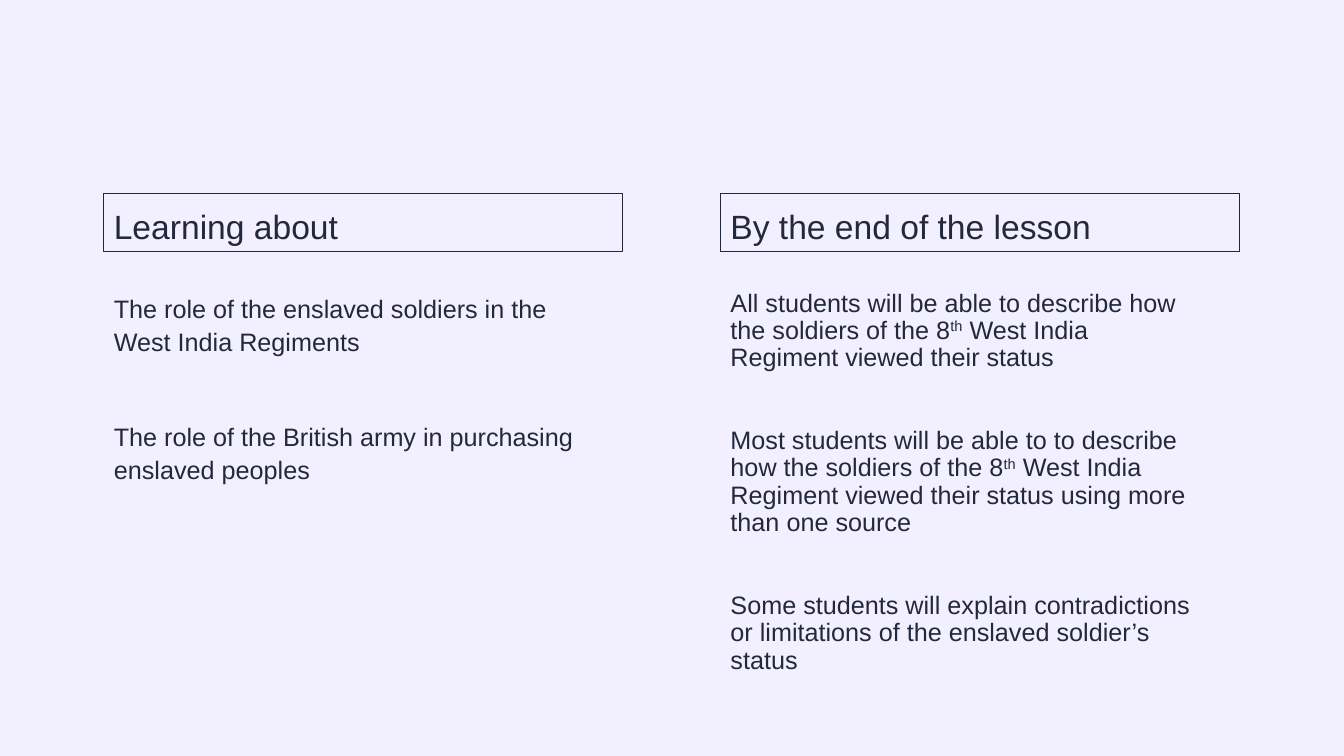
from pptx import Presentation
from pptx.dml.color import RGBColor
from pptx.enum.shapes import MSO_SHAPE
from pptx.enum.text import MSO_ANCHOR, PP_ALIGN
from pptx.util import Cm, Pt

INK = RGBColor(0x24, 0x28, 0x3C)
LAVENDER = RGBColor(0xF2, 0xF0, 0xFF)
FONT = "Arial"


def write(paragraph, text, size=18, line_spacing=0.9, space_before=0):
    """Fill a paragraph; text between two carets is superscript."""
    paragraph.alignment = PP_ALIGN.LEFT
    paragraph.line_spacing = line_spacing
    paragraph.space_before = Pt(space_before)
    for index, part in enumerate(text.split("^")):
        run = paragraph.add_run()
        run.text = part
        run.font.name = FONT
        run.font.size = Pt(size)
        run.font.color.rgb = INK
        if index % 2:
            run.font._element.set("baseline", "30000")


class LessonSlide:
    heading_top, heading_width, heading_height = Cm(4.88), Cm(13.08), Cm(1.47)
    body_top, body_width, body_height = Cm(7.19), Cm(12.32), Cm(9.93)

    def __init__(self, presentation):
        self.slide = presentation.slides.add_slide(presentation.slide_layouts[6])
        background = self.slide.background.fill
        background.solid()
        background.fore_color.rgb = LAVENDER

    def heading(self, left, text):
        box = self.slide.shapes.add_shape(
            MSO_SHAPE.RECTANGLE, left, self.heading_top,
            self.heading_width, self.heading_height)
        box.shadow.inherit = False
        box.fill.background()
        box.line.color.rgb = INK
        box.line.width = Pt(0.75)
        box.text_frame.word_wrap = True
        box.text_frame.vertical_anchor = MSO_ANCHOR.BOTTOM
        write(box.text_frame.paragraphs[0], text, size=24)

    def body(self, left, points, line_spacing, gap):
        frame = self.slide.shapes.add_textbox(
            left, self.body_top, self.body_width, self.body_height).text_frame
        frame.word_wrap = True
        for index, point in enumerate(points):
            paragraph = frame.add_paragraph() if index else frame.paragraphs[0]
            write(paragraph, point, line_spacing=line_spacing,
                  space_before=gap if index else 0)


def main():
    presentation = Presentation()
    presentation.slide_width = Cm(33.87)
    presentation.slide_height = Cm(19.05)
    lesson = LessonSlide(presentation)

    # Left column: topics
    topics_left = Cm(2.62)
    lesson.heading(topics_left, "Learning about")
    lesson.body(topics_left, [
        "The role of the enslaved soldiers in the West India Regiments",
        "The role of the British army in purchasing enslaved peoples",
    ], line_spacing=1.1, gap=44)

    # Right column: outcomes
    outcomes_left = Cm(18.16)
    lesson.heading(outcomes_left, "By the end of the lesson")
    lesson.body(outcomes_left, [
        "All students will be able to describe how the soldiers of the "
        "8^th^ West India Regiment viewed their status",
        "Most students will be able to to describe how the soldiers of the "
        "8^th^ West India Regiment viewed their status using more than one source",
        "Some students will explain contradictions or limitations of the "
        "enslaved soldier’s status",
    ], line_spacing=0.9, gap=40)

    presentation.save("out.pptx")


if __name__ == "__main__":
    main()
